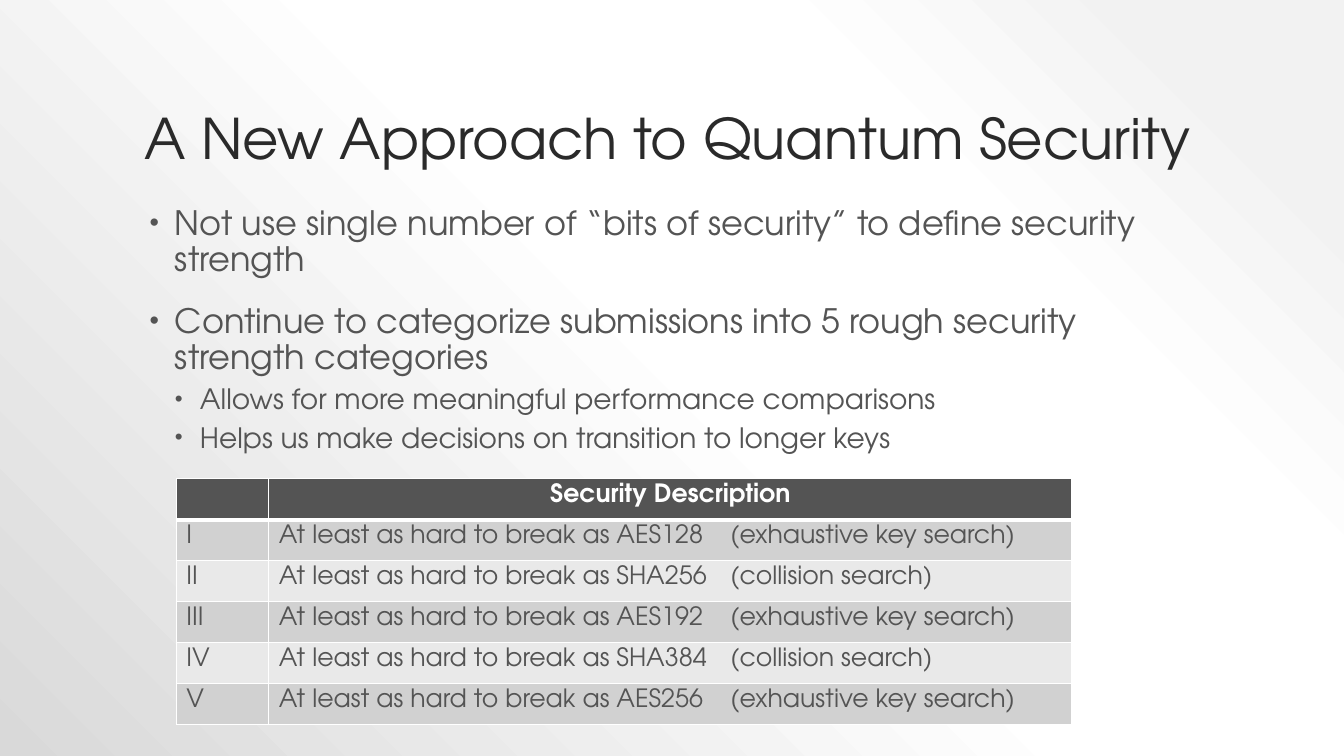
from dataclasses import dataclass

from lxml import etree
from pptx import Presentation
from pptx.dml.color import RGBColor
from pptx.enum.text import MSO_ANCHOR, MSO_AUTO_SIZE, PP_ALIGN
from pptx.oxml.ns import qn
from pptx.util import Pt

LEFT = PP_ALIGN.LEFT
CENTER = PP_ALIGN.CENTER
TOP = MSO_ANCHOR.TOP
BOTTOM = MSO_ANCHOR.BOTTOM
NO_AUTOFIT = MSO_AUTO_SIZE.NONE
TITLE_ONLY = 5
EMU_PER_PX = 9525


@dataclass(frozen=True)
class Theme:
    font: str = "TeX Gyre Adventor"
    title: str = "2A2A2A"
    ink: str = "545454"
    white: str = "FFFFFF"
    bands: tuple = ("D1D1D1", "E9E9E9")
    backdrop: tuple = ((10, "F2F2F2"), (28, "FFFFFF"), (48, "FFFFFF"), (100, "D9D9D9"))
    title_size: int = 40
    point_sizes: tuple = (24, 20)
    table_size: int = 18
    line_spacing: float = 0.9


@dataclass(frozen=True)
class Box:
    left: int
    top: int
    width: int
    height: int

    def emu(self) -> tuple:
        return tuple(px(v) for v in (self.left, self.top, self.width, self.height))


@dataclass(frozen=True)
class Point:
    text: str
    level: int = 0


@dataclass(frozen=True)
class Category:
    numeral: str
    benchmark: str
    attack: str


THEME = Theme()
TITLE_BOX = Box(128, 29, 1024, 139)
POINTS_BOX = Box(128, 192, 1024, 456)
TABLE_BOX = Box(168, 456, 853, 234)
NUMERAL_WIDTH = 88
ATTACK_TAB = 430
POINT_INDENTS = (29, 53)
BULLET_HANG = 24
POINT_GAPS = (18, 6)

POINTS = (
    Point("Not use single number of “bits of security” to define security strength"),
    Point("Continue to categorize submissions into 5 rough security strength categories"),
    Point("Allows for more meaningful performance comparisons", 1),
    Point("Helps us make decisions on transition to longer keys", 1),
)
CATEGORIES = (
    Category("I", "AES128", "exhaustive key search"),
    Category("II", "SHA256", "collision search"),
    Category("III", "AES192", "exhaustive key search"),
    Category("IV", "SHA384", "collision search"),
    Category("V", "AES256", "exhaustive key search"),
)


def px(value: int) -> int:
    return value * EMU_PER_PX


def add_xml(parent, tag: str, **attributes):
    return etree.SubElement(parent, qn(tag), attributes)


def style(paragraph, size: int, color: str, bold: bool = False) -> None:
    for run in paragraph.runs:
        run.font.name = THEME.font
        run.font.size = Pt(size)
        run.font.bold = bold
        run.font.color.rgb = RGBColor.from_string(color)


def paint_background(slide) -> None:
    slide.background.fill.gradient()
    gradient = slide.element.find(".//" + qn("a:gradFill"))
    for child in list(gradient):
        gradient.remove(child)
    stops = add_xml(gradient, "a:gsLst")
    for percent, color in THEME.backdrop:
        stop = add_xml(stops, "a:gs", pos=str(percent * 1000))
        add_xml(stop, "a:srgbClr", val=color)
    circle = add_xml(gradient, "a:path", path="circle")
    add_xml(circle, "a:fillToRect", l="100000", b="100000")


def write_title(slide, text: str) -> None:
    title = slide.shapes.title
    title.left, title.top, title.width, title.height = TITLE_BOX.emu()
    frame = title.text_frame
    frame.text = text
    frame.word_wrap = True
    frame.auto_size = NO_AUTOFIT
    frame.vertical_anchor = BOTTOM
    heading = frame.paragraphs[0]
    heading.alignment = LEFT
    heading.line_spacing = THEME.line_spacing
    style(heading, THEME.title_size, THEME.title)


def add_bullet(paragraph, level: int) -> None:
    properties = paragraph._p.get_or_add_pPr()
    properties.set("marL", str(px(POINT_INDENTS[level])))
    properties.set("indent", str(-px(BULLET_HANG)))
    color = add_xml(properties, "a:buClr")
    add_xml(color, "a:srgbClr", val=THEME.ink)
    add_xml(properties, "a:buSzPct", val="80000")
    add_xml(properties, "a:buFont", typeface="Arial")
    add_xml(properties, "a:buChar", char="•")


def write_points(slide, points: tuple) -> None:
    frame = slide.shapes.add_textbox(*POINTS_BOX.emu()).text_frame
    frame.word_wrap = True
    frame.text = "\n".join(point.text for point in points)
    for paragraph, point in zip(frame.paragraphs, points):
        paragraph.level = point.level
        paragraph.line_spacing = THEME.line_spacing
        paragraph.space_before = Pt(POINT_GAPS[point.level])
        add_bullet(paragraph, point.level)
        style(paragraph, THEME.point_sizes[point.level], THEME.ink)


def add_borders(cell, top: int, bottom: int) -> None:
    properties = cell._tc.get_or_add_tcPr()
    widths = {"a:lnL": 1, "a:lnR": 1, "a:lnT": top, "a:lnB": bottom}
    for position, (side, width) in enumerate(widths.items()):
        line = add_xml(properties, side, w=str(Pt(width)))
        fill = add_xml(line, "a:solidFill")
        add_xml(fill, "a:srgbClr", val=THEME.white)
        properties.insert(position, line)


def add_attack_tab(paragraph) -> None:
    tabs = add_xml(paragraph._p.get_or_add_pPr(), "a:tabLst")
    add_xml(tabs, "a:tab", pos=str(px(ATTACK_TAB)), algn="l")


def add_category_table(slide, categories: tuple) -> None:
    rows = [("", "Security Description")]
    rows += [(c.numeral, f"At least as hard to break as {c.benchmark}\t({c.attack})")
             for c in categories]
    table = slide.shapes.add_table(len(rows), 2, *TABLE_BOX.emu()).table
    table.columns[0].width = px(NUMERAL_WIDTH)
    table.columns[1].width = px(TABLE_BOX.width - NUMERAL_WIDTH)
    for r, texts in enumerate(rows):
        header = r == 0
        fill = THEME.ink if header else THEME.bands[(r - 1) % 2]
        for c, text in enumerate(texts):
            cell = table.cell(r, c)
            cell.text = text
            cell.vertical_anchor = TOP
            cell.fill.solid()
            cell.fill.fore_color.rgb = RGBColor.from_string(fill)
            add_borders(cell, top=3 if r == 1 else 1, bottom=3 if header else 1)
            paragraph = cell.text_frame.paragraphs[0]
            paragraph.alignment = CENTER if header else LEFT
            if "\t" in text:
                add_attack_tab(paragraph)
            style(paragraph, THEME.table_size, THEME.white if header else THEME.ink, header)


def main() -> None:
    deck = Presentation()
    deck.slide_width, deck.slide_height = px(1280), px(720)
    slide = deck.slides.add_slide(deck.slide_layouts[TITLE_ONLY])
    paint_background(slide)
    write_title(slide, "A New Approach to Quantum Security")
    write_points(slide, POINTS)
    add_category_table(slide, CATEGORIES)
    deck.save("out.pptx")


if __name__ == "__main__":
    main()
